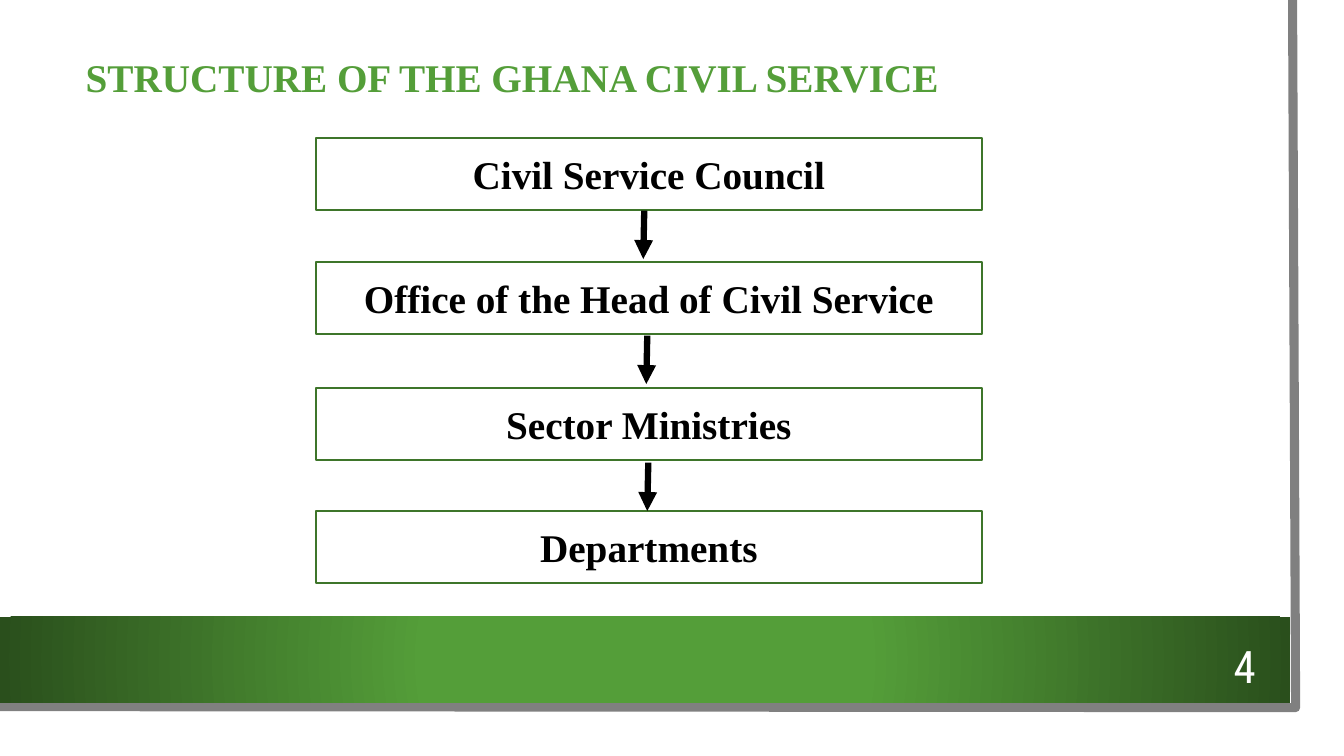
from dataclasses import dataclass

from pptx import Presentation
from pptx.dml.color import RGBColor
from pptx.enum.shapes import MSO_CONNECTOR, MSO_SHAPE
from pptx.enum.text import MSO_ANCHOR, PP_ALIGN
from pptx.oxml import parse_xml
from pptx.oxml.ns import nsdecls, qn
from pptx.util import Inches, Pt


@dataclass(frozen=True)
class Theme:
    green: str = "549E39"
    dark_green: str = "2A4F1C"
    outline: str = "3E752A"
    frame: str = "808080"
    black: str = "000000"
    white: str = "FFFFFF"
    serif: str = "Times New Roman"
    condensed: str = "Roboto Condensed"
    body_size: int = 28
    number_size: int = 32


class SlideBuilder:
    def __init__(self, page, theme):
        self.page = page
        self.shapes = page.shapes
        self.theme = theme

    def set_text(self, shape, text, color, font, size, bold=True, align=PP_ALIGN.CENTER):
        frame = shape.text_frame
        frame.word_wrap = True
        frame.vertical_anchor = MSO_ANCHOR.MIDDLE
        para = frame.paragraphs[0]
        para.alignment = align
        span = para.add_run()
        span.text = text
        formats = {"name": font, "size": Pt(size), "bold": bold}
        for key, value in formats.items():
            setattr(span.font, key, value)
        span.font.color.rgb = RGBColor.from_string(color)
        return para

    def stroke(self, shape, color, width):
        shape.line.color.rgb = RGBColor.from_string(color)
        shape.line.width = Pt(width)

    def title(self, text, *place):
        box = self.shapes.title
        for key, value in zip(("left", "top", "width", "height"), place):
            setattr(box, key, Inches(value))
        para = self.set_text(box, text, self.theme.green, self.theme.serif,
                             self.theme.body_size, align=PP_ALIGN.LEFT)
        para.line_spacing = 0.9

    def rectangle(self, *place):
        box = self.shapes.add_shape(MSO_SHAPE.RECTANGLE, *map(Inches, place))
        box.shadow.inherit = False
        return box

    def band(self, *place):
        """Draw a bar with a radial gradient, light in the middle."""
        bar = self.rectangle(*place)
        bar.line.fill.background()
        bar.fill.gradient()
        stops = ((0.34, self.theme.green), (1, self.theme.dark_green))
        for stop, (position, color) in zip(bar.fill.gradient_stops, stops):
            stop.position = position
            stop.color.rgb = RGBColor.from_string(color)
        gradient = bar._element.spPr.find(qn("a:gradFill"))
        gradient.replace(gradient.find(qn("a:lin")), parse_xml(
            f'<a:path {nsdecls("a")} path="circle">'
            '<a:fillToRect l="50000" t="50000" r="50000" b="50000"/></a:path>'))

    def edge(self, points, width):
        """Draw an open line through the points."""
        start, *rest = [(Inches(x), Inches(y)) for x, y in points]
        builder = self.shapes.build_freeform(*start)
        builder.add_line_segments(rest, close=False)
        line = builder.convert_to_shape()
        line.shadow.inherit = False
        line.fill.background()
        self.stroke(line, self.theme.frame, width)

    def level(self, text, *place):
        box = self.rectangle(*place)
        box.fill.background()
        self.stroke(box, self.theme.outline, 1.5)
        self.set_text(box, text, self.theme.black, self.theme.serif, self.theme.body_size)

    def arrow(self, *ends):
        link = self.shapes.add_connector(MSO_CONNECTOR.STRAIGHT, *map(Inches, ends))
        self.stroke(link, self.theme.black, 4.5)
        properties = link._element.spPr
        properties.find(qn("a:ln")).append(
            parse_xml(f'<a:tailEnd {nsdecls("a")} type="triangle"/>'))
        properties.append(parse_xml(f'<a:effectLst {nsdecls("a")}/>'))

    def number(self, text, *place):
        box = self.shapes.add_textbox(*map(Inches, place))
        self.set_text(box, text, self.theme.white, self.theme.condensed,
                      self.theme.number_size, bold=False)


def main():
    deck = Presentation()
    deck.slide_width, deck.slide_height = Inches(13.33), Inches(7.5)
    page = deck.slides.add_slide(deck.slide_layouts[5])
    slide = SlideBuilder(page, Theme())

    slide.title("STRUCTURE OF THE GHANA CIVIL SERVICE", 0.75, 0.38, 11.37, 0.83)
    slide.edge([(12.82, 0), (12.85, 7.02), (-0.03, 7.01)], 6.5)
    slide.band(0, 6.12, 12.8, 0.85)

    levels = {
        "Civil Service Council": 1.37,
        "Office of the Head of Civil Service": 2.6,
        "Sector Ministries": 3.85,
        "Departments": 5.07,
    }
    for text, top in levels.items():
        slide.level(text, 3.13, top, 6.61, 0.71)
    for x, top in ((6.39, 2.09), (6.42, 3.33), (6.43, 4.59)):
        slide.arrow(x, top, x - 0.01, top + 0.48)

    slide.number("4", 11.85, 6.33, 0.99, 0.55)
    deck.save("out.pptx")


if __name__ == "__main__":
    main()
